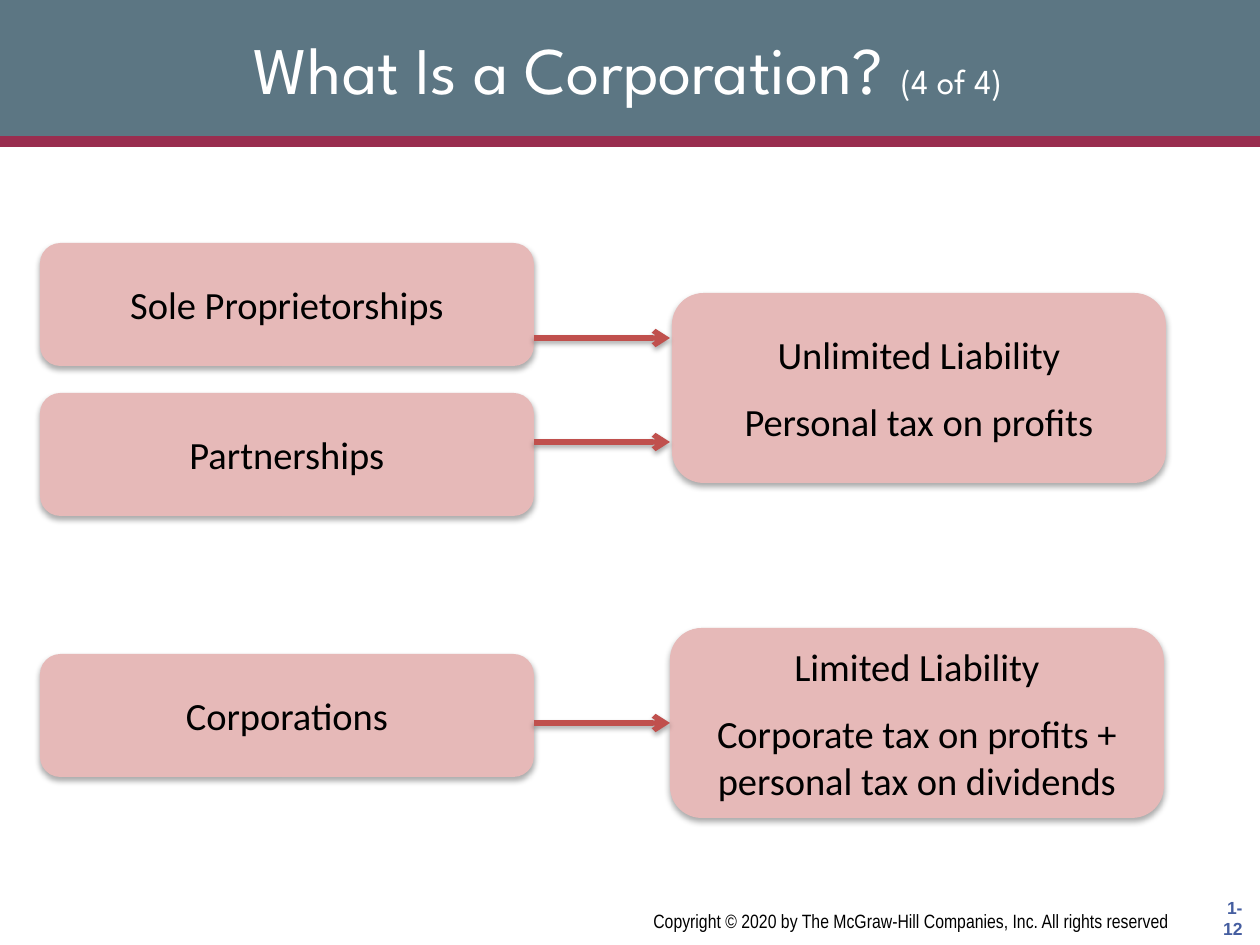
from dataclasses import dataclass

from lxml import etree
from pptx import Presentation
from pptx.dml.color import RGBColor
from pptx.enum.shapes import MSO_CONNECTOR, MSO_SHAPE
from pptx.enum.text import MSO_ANCHOR, PP_ALIGN
from pptx.oxml.ns import qn
from pptx.util import Emu, Pt

RECT, ROUNDED = MSO_SHAPE.RECTANGLE, MSO_SHAPE.ROUNDED_RECTANGLE
STRAIGHT = MSO_CONNECTOR.STRAIGHT
TOP, MIDDLE = MSO_ANCHOR.TOP, MSO_ANCHOR.MIDDLE
CENTER, RIGHT = PP_ALIGN.CENTER, PP_ALIGN.RIGHT

SLATE = RGBColor(0x5C, 0x76, 0x83)
MAROON = RGBColor(0x99, 0x2D, 0x4F)
PINK = RGBColor(0xE6, 0xB9, 0xB8)
RED = RGBColor(0xC0, 0x50, 0x4D)
BLUE = RGBColor(0x45, 0x5E, 0xA0)
BLACK = RGBColor(0, 0, 0)
WHITE = RGBColor(0xFF, 0xFF, 0xFF)

PX_PER_INCH = 126
LEFT_SIDE = 1  # connection site


def px(length: int) -> Emu:
    return Emu(round(length * 914400 / PX_PER_INCH))


@dataclass(frozen=True)
class Area:
    left: int
    top: int
    width: int
    height: int

    def emu(self) -> tuple:
        return px(self.left), px(self.top), px(self.width), px(self.height)


@dataclass(frozen=True)
class Shadow:
    opacity: int  # percent
    blur: float  # points
    distance: float  # points


@dataclass(frozen=True)
class Card:
    area: Area
    lines: tuple


TITLE_FORMAT = {"name": "League Spartan", "size": Pt(38)}
COUNT_FORMAT = {"name": "League Spartan", "size": Pt(20)}
CARD_FORMAT = {"name": "Calibri", "size": Pt(22)}
COPYRIGHT_FORMAT = {"name": "Arial Narrow", "size": Pt(11)}
NUMBER_FORMAT = {"name": "Arial", "size": Pt(10), "bold": True}

CARD_SHADOW = Shadow(32, 3.5, 2.2)
ARROW_SHADOW = Shadow(35, 3.1, 1.8)

# Business forms on the left, their consequences on the right
CARD_WIDTH, FORM_HEIGHT, RESULT_HEIGHT = 494, 123, 190
FORM_LEFT = 40
ARROW_START, ARROW_END = FORM_LEFT + CARD_WIDTH, 670
FORMS = [
    Card(Area(FORM_LEFT, top, CARD_WIDTH, FORM_HEIGHT), (name,))
    for top, name in (
        (243, "Sole Proprietorships"),
        (393, "Partnerships"),
        (654, "Corporations"),
    )
]
UNLIMITED = Card(
    Area(672, 293, CARD_WIDTH, RESULT_HEIGHT),
    ("Unlimited Liability", "Personal tax on profits"),
)
LIMITED = Card(
    Area(ARROW_END, 628, CARD_WIDTH, RESULT_HEIGHT),
    ("Limited Liability", "Corporate tax on profits + personal tax on dividends"),
)


def add_run(paragraph, text: str, font_format: dict, color: RGBColor) -> None:
    run = paragraph.add_run()
    run.text = text
    for name, value in font_format.items():
        setattr(run.font, name, value)
    run.font.color.rgb = color


def add_shadow(effects, shadow: Shadow) -> None:
    outer = etree.SubElement(
        effects, qn("a:outerShdw"),
        blurRad=str(Pt(shadow.blur)), dist=str(Pt(shadow.distance)),
        dir="5400000", rotWithShape="0",
    )
    color = etree.SubElement(outer, qn("a:srgbClr"), val="000000")
    etree.SubElement(color, qn("a:alpha"), val=str(shadow.opacity * 1000))


def add_block(slide, kind: MSO_SHAPE, area: Area, fill: RGBColor):
    block = slide.shapes.add_shape(kind, *area.emu())
    block.shadow.inherit = False
    block.fill.solid()
    block.fill.fore_color.rgb = fill
    block.line.fill.background()
    return block


def add_card(slide, card: Card):
    block = add_block(slide, ROUNDED, card.area, PINK)
    add_shadow(block.element.spPr.find(qn("a:effectLst")), CARD_SHADOW)
    frame = block.text_frame
    frame.word_wrap = True
    frame.vertical_anchor = MIDDLE
    for index, line in enumerate(card.lines):
        paragraph = frame.add_paragraph() if index else frame.paragraphs[0]
        paragraph.alignment = CENTER
        if index:
            paragraph.space_before = Pt(12)
        add_run(paragraph, line, CARD_FORMAT, BLACK)
    return block


def add_label(slide, area: Area, align: PP_ALIGN, anchor: MSO_ANCHOR, wrap: bool = True):
    frame = slide.shapes.add_textbox(*area.emu()).text_frame
    frame.word_wrap = wrap
    frame.vertical_anchor = anchor
    paragraph = frame.paragraphs[0]
    paragraph.alignment = align
    return paragraph


def add_arrow(slide, y: int):
    arrow = slide.shapes.add_connector(
        STRAIGHT, px(ARROW_START), px(y), px(ARROW_END), px(y)
    )
    arrow.line.color.rgb = RED
    arrow.line.width = Pt(3)
    properties = arrow.element.spPr
    etree.SubElement(properties.find(qn("a:ln")), qn("a:tailEnd"), type="arrow")
    add_shadow(etree.SubElement(properties, qn("a:effectLst")), ARROW_SHADOW)
    return arrow


def main() -> None:
    presentation = Presentation()
    presentation.slide_width, presentation.slide_height = px(1260), px(945)
    slide = presentation.slides.add_slide(presentation.slide_layouts[6])

    # Header band and title
    add_block(slide, RECT, Area(0, 136, 1260, 11), MAROON)
    add_block(slide, RECT, Area(0, 0, 1260, 136), SLATE)
    title = add_label(slide, Area(32, 10, 1192, 116), CENTER, MIDDLE)
    add_run(title, "What Is a Corporation? ", TITLE_FORMAT, WHITE)
    add_run(title, "(4 of 4)", COUNT_FORMAT, WHITE)

    # Footer
    number = add_label(slide, Area(1192, 892, 63, 53), RIGHT, MIDDLE, wrap=False)
    add_run(number, "1- 12", NUMBER_FORMAT, BLUE)
    notice = add_label(slide, Area(451, 903, 735, 37), RIGHT, TOP)
    add_run(
        notice,
        "Copyright © 2020 by The McGraw-Hill Companies, Inc. All rights reserved ",
        COPYRIGHT_FORMAT, BLACK,
    )

    # Cards
    for form in FORMS:
        add_card(slide, form)
    add_card(slide, UNLIMITED)
    limited = add_card(slide, LIMITED)

    # Arrows from forms to consequences
    for y in (338, 442):
        add_arrow(slide, y)
    corporation_arrow = add_arrow(slide, LIMITED.area.top + RESULT_HEIGHT // 2)
    corporation_arrow.end_connect(limited, LEFT_SIDE)

    presentation.save("out.pptx")


if __name__ == "__main__":
    main()
